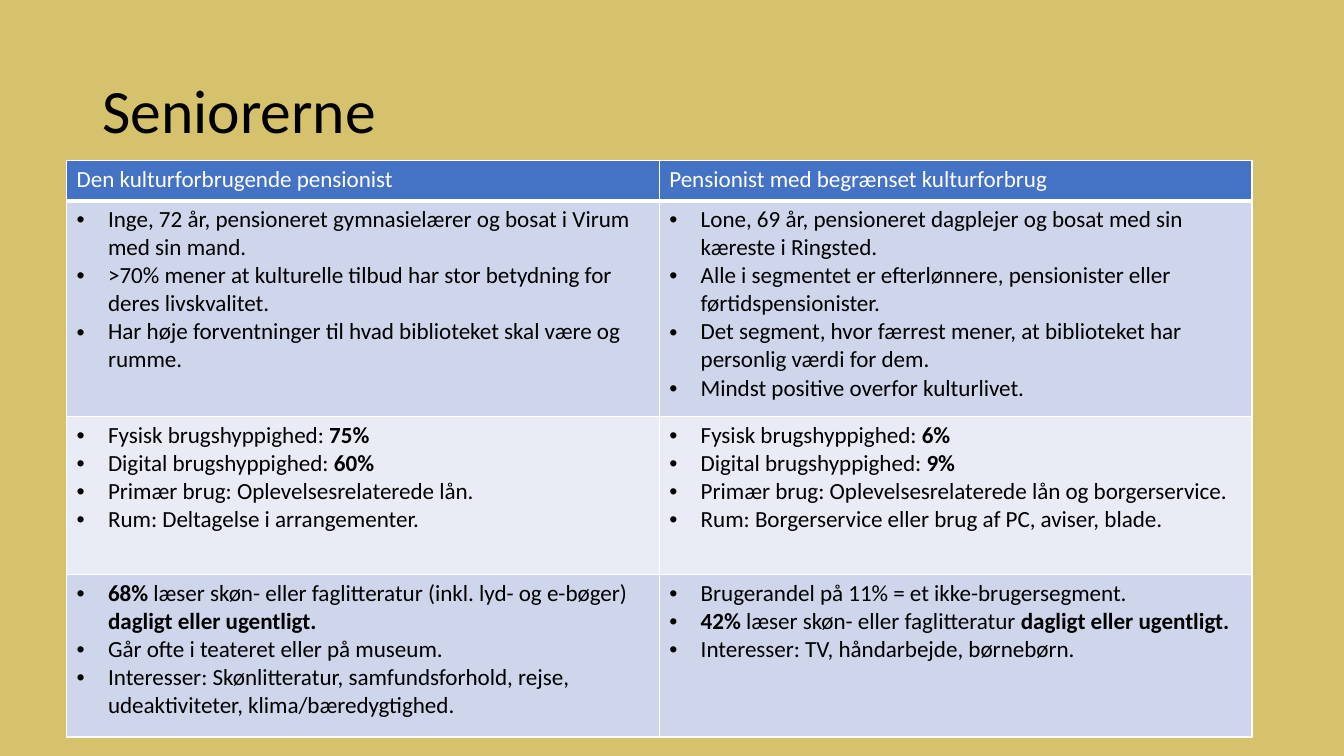
from lxml import etree
from pptx import Presentation
from pptx.dml.color import RGBColor
from pptx.enum.text import MSO_ANCHOR
from pptx.oxml.ns import qn
from pptx.util import Cm, Pt

MIDDLE = MSO_ANCHOR.MIDDLE
FONT = "Calibri"
BLACK, WHITE = "000000", "FFFFFF"
BACKGROUND, HEADER_FILL = "D6C26C", "4472C4"
BODY_FILLS = ["CFD5EA", "E9EBF5"]
ROW_HEIGHTS = [1.02, 5.43, 3.99, 4.09]
BULLET_INDENT = Cm(0.79)

HEADERS = [
    "Den kulturforbrugende pensionist",
    "Pensionist med begrænset kulturforbrug",
]
# Asterisks enclose bold words.
SEGMENTS = [
    [
        [
            "Inge, 72 år, pensioneret gymnasielærer og bosat i Virum med sin mand.",
            ">70% mener at kulturelle tilbud har stor betydning for deres livskvalitet.",
            "Har høje forventninger til hvad biblioteket skal være og rumme.",
        ],
        [
            "Lone, 69 år, pensioneret dagplejer og bosat med sin kæreste i Ringsted.",
            "Alle i segmentet er efterlønnere, pensionister eller førtidspensionister.",
            "Det segment, hvor færrest mener, at biblioteket har personlig værdi for dem.",
            "Mindst positive overfor kulturlivet.",
        ],
    ],
    [
        [
            "Fysisk brugshyppighed: *75%*",
            "Digital brugshyppighed: *60%*",
            "Primær brug: Oplevelsesrelaterede lån.",
            "Rum: Deltagelse i arrangementer.",
        ],
        [
            "Fysisk brugshyppighed: *6%*",
            "Digital brugshyppighed: *9%*",
            "Primær brug: Oplevelsesrelaterede lån og borgerservice.",
            "Rum: Borgerservice eller brug af PC, aviser, blade.",
        ],
    ],
    [
        [
            "*68%* læser skøn- eller faglitteratur (inkl. lyd- og e-bøger) *dagligt eller ugentligt.*",
            "Går ofte i teateret eller på museum.",
            "Interesser: Skønlitteratur, samfundsforhold, rejse, udeaktiviteter, klima/bæredygtighed.",
        ],
        [
            "Brugerandel på 11% = et ikke-brugersegment.",
            "*42%* læser skøn- eller faglitteratur *dagligt eller ugentligt.*",
            "Interesser: TV, håndarbejde, børnebørn.",
        ],
    ],
]


def paint(color_format, color):
    color_format.rgb = RGBColor.from_string(color)


def fill_solid(fill, color):
    fill.solid()
    paint(fill.fore_color, color)


def add_spans(para, text, size, color):
    for position, part in enumerate(text.split("*")):
        if part:
            span = para.add_run()
            span.text = part
            span.font.name = FONT
            span.font.size = Pt(size)
            span.font.bold = position % 2 == 1
            paint(span.font.color, color)


def add_bullet(para):
    properties = para._p.get_or_add_pPr()
    properties.set("marL", str(BULLET_INDENT))
    properties.set("indent", str(-BULLET_INDENT))
    etree.SubElement(properties, qn("a:buFont")).set("typeface", "Arial")
    etree.SubElement(properties, qn("a:buChar")).set("char", "•")


def add_borders(cell, bottom_width):
    properties = cell._tc.get_or_add_tcPr()
    for side, width in (("L", 1), ("R", 1), ("T", 1), ("B", bottom_width)):
        line = etree.SubElement(properties, qn(f"a:ln{side}"))
        line.set("w", str(Pt(width)))
        solid = etree.SubElement(line, qn("a:solidFill"))
        etree.SubElement(solid, qn("a:srgbClr")).set("val", WHITE)


def fill_cell(cell, lines, fill, color, is_header):
    add_borders(cell, 3 if is_header else 1)
    fill_solid(cell.fill, fill)
    frame = cell.text_frame
    for index, line in enumerate(lines):
        para = frame.add_paragraph() if index else frame.paragraphs[0]
        if not is_header:
            add_bullet(para)
        add_spans(para, line, 16.5, color)


def add_title(page, left, top, width, height):
    box = page.shapes.add_textbox(left, top, width, height)
    frame = box.text_frame
    frame.word_wrap = True
    frame.vertical_anchor = MIDDLE
    para = frame.paragraphs[0]
    para.line_spacing = 0.9
    add_spans(para, "Seniorerne", 44, BLACK)


def add_segment_table(page, left, top, width):
    height = Cm(sum(ROW_HEIGHTS))
    frame = page.shapes.add_table(len(ROW_HEIGHTS), len(HEADERS), left, top, width, height)
    table = frame.table
    for row, row_height in zip(table.rows, ROW_HEIGHTS):
        row.height = Cm(row_height)
    for column, header in enumerate(HEADERS):
        fill_cell(table.cell(0, column), [header], HEADER_FILL, WHITE, True)
    for row, segments in enumerate(SEGMENTS):
        for column, lines in enumerate(segments):
            fill_cell(table.cell(row + 1, column), lines, BODY_FILLS[row % 2], BLACK, False)


def main():
    deck = Presentation()
    deck.slide_width, deck.slide_height = Cm(33.87), Cm(19.05)
    page = deck.slides.add_slide(deck.slide_layouts[6])
    fill_solid(page.background.fill, BACKGROUND)
    add_title(page, Cm(2.33), Cm(1.01), Cm(29.21), Cm(3.68))
    add_segment_table(page, Cm(1.68), Cm(4.04), Cm(29.87))
    deck.save("out.pptx")


if __name__ == "__main__":
    main()
